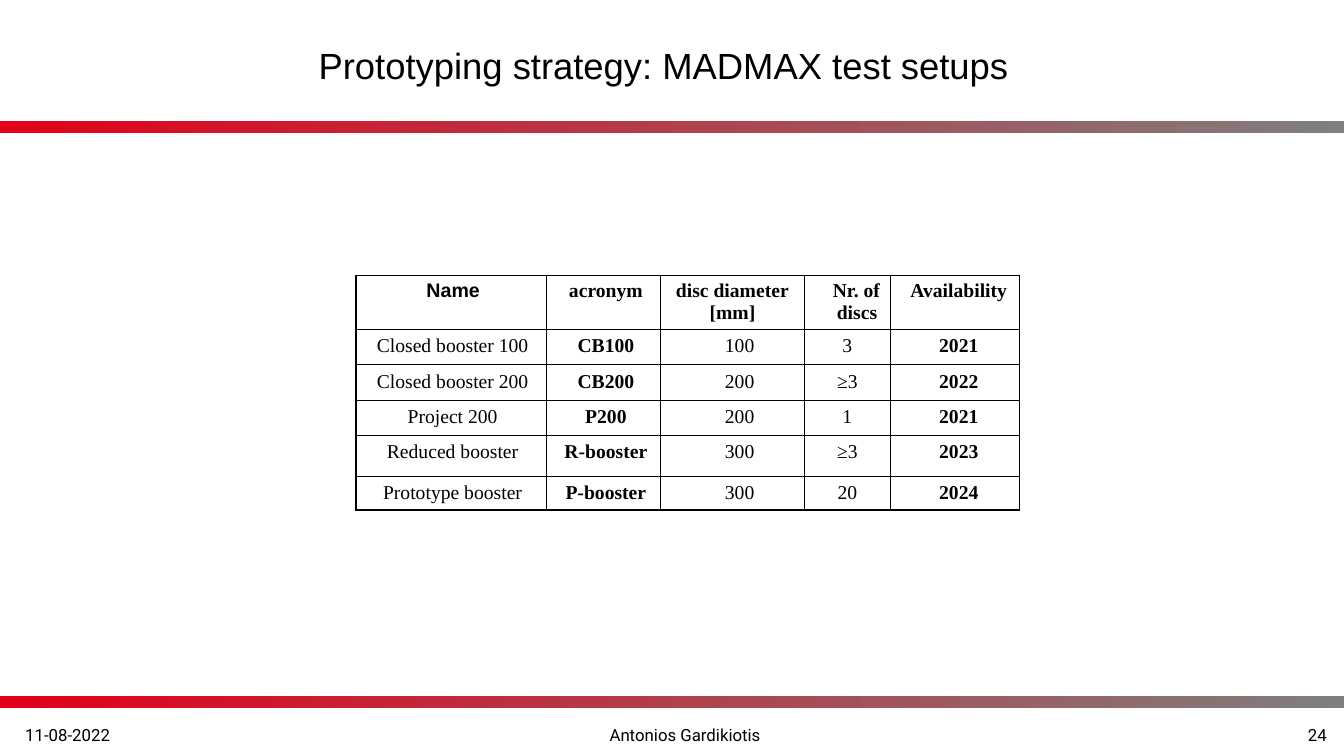
import pptx
import pptx.util
import pptx.dml.color
import pptx.enum.shapes
import pptx.enum.text
import pptx.oxml
import pptx.oxml.ns

Inches, Pt = pptx.util.Inches, pptx.util.Pt
RGBColor = pptx.dml.color.RGBColor
ALIGN = pptx.enum.text.PP_ALIGN

BLACK = RGBColor(0, 0, 0)
RED = RGBColor(0xE2, 0x00, 0x1A)
GREY = RGBColor(0x7F, 0x7F, 0x7E)

WIDTH, HEIGHT = Inches(13.33), Inches(7.5)
BAR_TOPS = (0.16, 0.92)  # shares of the slide height
BAR_HEIGHT = 0.016
NO_STYLE = "{2D5ABB26-0587-4C30-8999-92F81FD0307C}"

TITLE_FONT = {"name": "Arial", "size": Pt(26), "bold": False}
FOOTER_FONT = {"name": "Roboto", "size": Pt(12), "bold": False}
SETUP_FONT = {"name": "Times New Roman", "size": Pt(14), "bold": False}
BOLD_FONT = SETUP_FONT | {"bold": True}
NAME_FONT = BOLD_FONT | {"name": "Arial"}

FOOTER = [
    ("11-08-2022", ALIGN.LEFT, 0.14, 3.43),
    ("Antonios Gardikiotis", ALIGN.CENTER, 0, 6.71),
    ("24", ALIGN.RIGHT, 0, 3.11),
]
COLUMN_WIDTHS = [1.89, 1.13, 1.43, 0.85, 1.28]
ROW_HEIGHTS = [0.54, 0.35, 0.35, 0.35, 0.41, 0.33]
HEADER = [
    (["Name"], ALIGN.CENTER, [0.04], NAME_FONT),
    (["acronym"], ALIGN.CENTER, [0.05], BOLD_FONT),
    (["disc diameter", "[mm]"], ALIGN.CENTER, [0, 0], BOLD_FONT),
    (["Nr. of", "discs"], ALIGN.LEFT, [0.18, 0.22], BOLD_FONT),
    (["Availability"], ALIGN.CENTER, [0.08], BOLD_FONT),
]
COLUMN_FORMATS = [
    (ALIGN.CENTER, [0.03], SETUP_FONT),
    (ALIGN.CENTER, [0.05], BOLD_FONT),
    (ALIGN.LEFT, [0.54], SETUP_FONT),
    (ALIGN.CENTER, [0], SETUP_FONT),
    (ALIGN.CENTER, [0.08], BOLD_FONT),
]
SETUPS = [
    ("Closed booster 100", "CB100", "100", "3", "2021"),
    ("Closed booster 200", "CB200", "200", "≥3", "2022"),
    ("Project 200", "P200", "200", "1", "2021"),
    ("Reduced booster", "R-booster", "300", "≥3", "2023"),
    ("Prototype booster", "P-booster", "300", "20", "2024"),
]


def set_attributes(target, values):
    for name, value in values.items():
        setattr(target, name, value)


def write_lines(text_frame, lines, alignment, indents, font, spacing=None):
    """Write one paragraph per line, each with its own left indent in inches."""
    for number, (line, indent) in enumerate(zip(lines, indents)):
        paragraph = text_frame.paragraphs[0] if number == 0 else text_frame.add_paragraph()
        properties = paragraph._p.get_or_add_pPr()
        properties.set("marL", str(Inches(indent)))
        properties.set("indent", "0")
        set_attributes(paragraph, {"alignment": alignment, "line_spacing": spacing,
                                   "space_before": Pt(0)})
        run = paragraph.add_run()
        run.text = line
        set_attributes(run.font, font)
        run.font.color.rgb = BLACK


def add_title(slide, text):
    title = slide.shapes.title
    set_attributes(title, {"left": Inches(3.15), "top": Inches(0.38),
                           "width": Inches(7.58), "height": Inches(0.38)})
    set_attributes(title.text_frame, {
        "margin_left": 0, "margin_right": 0, "margin_top": Inches(0.05), "margin_bottom": 0,
        "vertical_anchor": pptx.enum.text.MSO_ANCHOR.TOP, "word_wrap": True,
        "auto_size": pptx.enum.text.MSO_AUTO_SIZE.NONE})
    write_lines(title.text_frame, [text], ALIGN.LEFT, [0.01], TITLE_FONT)


def add_gradient_bar(slide, top_share):
    bar = slide.shapes.add_shape(pptx.enum.shapes.MSO_SHAPE.RECTANGLE, 0,
                                 int(HEIGHT * top_share), WIDTH, int(HEIGHT * BAR_HEIGHT))
    bar.shadow.inherit = False
    bar.line.fill.background()
    bar.fill.gradient()
    bar.fill.gradient_angle = 0
    for stop, color, position in zip(bar.fill.gradient_stops, (RED, GREY), (0, 1)):
        stop.color.rgb = color
        stop.position = position


def add_plain_table(slide, left, top, widths, heights):
    frame = slide.shapes.add_table(len(heights), len(widths), Inches(left), Inches(top),
                                   Inches(sum(widths)), Inches(sum(heights)))
    table = frame.table
    set_attributes(table, {"first_row": False, "horz_banding": False})
    table._tbl.tblPr.find(pptx.oxml.ns.qn("a:tableStyleId")).text = NO_STYLE
    for column, width in zip(table.columns, widths):
        column.width = Inches(width)
    for row, height in zip(table.rows, heights):
        row.height = Inches(height)
    for cell in table.iter_cells():
        cell.fill.background()
    return table


def add_borders(cell):
    properties = cell._tc.get_or_add_tcPr()
    for position, side in enumerate(("lnL", "lnR", "lnT", "lnB")):
        properties.insert(position, pptx.oxml.parse_xml(
            f'<a:{side} {pptx.oxml.ns.nsdecls("a")} w="{Pt(0.96)}">'
            f'<a:solidFill><a:srgbClr val="{BLACK}"/></a:solidFill></a:{side}>'))


def add_setup_table(slide):
    table = add_plain_table(slide, 3.53, 2.73, COLUMN_WIDTHS, ROW_HEIGHTS)
    for column, (lines, alignment, indents, font) in enumerate(HEADER):
        write_lines(table.cell(0, column).text_frame, lines, alignment, indents, font, Pt(15.5))
    for row, setup in enumerate(SETUPS, start=1):
        for column, (text, column_format) in enumerate(zip(setup, COLUMN_FORMATS)):
            write_lines(table.cell(row, column).text_frame, [text], *column_format, Pt(16))
    for cell in table.iter_cells():
        add_borders(cell)


def add_footer(slide):
    widths = [entry[-1] for entry in FOOTER]
    table = add_plain_table(slide, 0.01, 7.17, widths, [0.27])
    for column, (text, alignment, indent, _) in enumerate(FOOTER):
        write_lines(table.cell(0, column).text_frame, [text], alignment, [indent],
                    FOOTER_FONT, Pt(12.4))


def main():
    presentation = pptx.Presentation()
    set_attributes(presentation, {"slide_width": WIDTH, "slide_height": HEIGHT})
    slide = presentation.slides.add_slide(presentation.slide_layouts.get_by_name("Title Only"))
    for top_share in BAR_TOPS:
        add_gradient_bar(slide, top_share)
    add_footer(slide)
    add_title(slide, "Prototyping strategy: MADMAX test setups")
    add_setup_table(slide)
    presentation.save("out.pptx")


if __name__ == "__main__":
    main()
